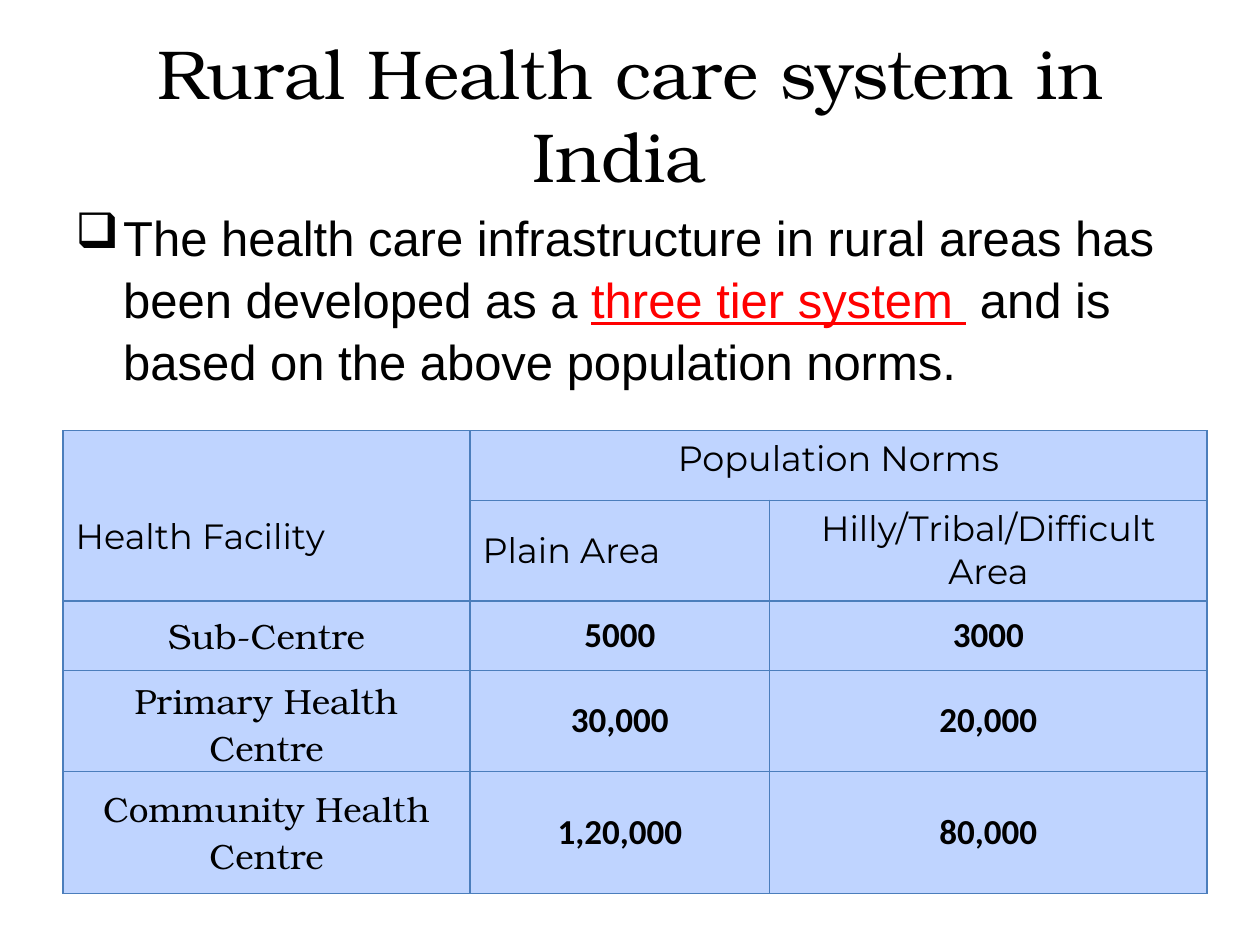
from lxml import etree
from pptx import Presentation
from pptx import util as u
from pptx.dml.color import RGBColor
from pptx.enum import text
from pptx.oxml.ns import qn

COLORS = {"ink": "000000", "accent": "FF0000", "cell": "BFD4FF", "border": "4B7EBC"}
SERIF, SANS, HEADING, FIGURE = "TeX Gyre Bonum", "Arial", "Montserrat", "Calibri"
WIDTH, HEIGHT = u.Inches(10), u.Inches(7.5)
MARGIN = 0.05  # share of the slide's width
COLUMNS = [3.23, 2.38, 3.47]
ROWS = [0.55, 0.8, 0.55, 0.8, 0.97]
CENTER, LEFT = text.PP_ALIGN.CENTER, text.PP_ALIGN.LEFT
MIDDLE, TOP = text.MSO_ANCHOR.MIDDLE, text.MSO_ANCHOR.TOP

FACILITIES = [
    ("Sub-Centre", "5000", "3000"),
    ("Primary Health Centre", "30,000", "20,000"),
    ("Community Health Centre", "1,20,000", "80,000"),
]


def color(name):
    return RGBColor.from_string(COLORS[name])


def style(paragraph, font, size, align=LEFT, bold=False):
    paragraph.alignment = align
    paragraph.font.name = font
    paragraph.font.size = u.Pt(size)
    paragraph.font.bold = bold
    paragraph.font.color.rgb = color("ink")


def add_text_box(slide, top, height, anchor):
    """Add a box between the side margins; top and height are shares of the slide."""
    box = slide.shapes.add_textbox(int(WIDTH * MARGIN), int(HEIGHT * top),
                                   int(WIDTH * (1 - 2 * MARGIN)), int(HEIGHT * height))
    frame = box.text_frame
    frame.word_wrap = True
    frame.vertical_anchor = anchor
    return frame.paragraphs[0]


def add_bullet(paragraph, symbol, indent):
    properties = paragraph._p.get_or_add_pPr()
    properties.set("marL", str(u.Inches(indent)))
    properties.set("indent", str(-u.Inches(indent)))
    etree.SubElement(properties, qn("a:buChar")).set("char", symbol)


def add_borders(cell):
    properties = cell._tc.get_or_add_tcPr()
    for position, side in enumerate(("lnL", "lnR", "lnT", "lnB")):
        line = etree.Element(qn(f"a:{side}"), w=str(u.Pt(0.75)))
        fill = etree.SubElement(line, qn("a:solidFill"))
        etree.SubElement(fill, qn("a:srgbClr"), val=COLORS["border"])
        properties.insert(position, line)


def fill_cell(cell, words, font, align=CENTER, bold=False, anchor=MIDDLE):
    cell.text = words
    cell.vertical_anchor = anchor
    style(cell.text_frame.paragraphs[0], font, 20, align, bold)


def add_norms_table(slide):
    frame = slide.shapes.add_table(len(ROWS), len(COLUMNS), int(WIDTH * MARGIN), u.Inches(3.42),
                                   u.Inches(sum(COLUMNS)), u.Inches(sum(ROWS)))
    norms = frame.table
    for column, width in zip(norms.columns, COLUMNS):
        column.width = u.Inches(width)
    for row, height in zip(norms.rows, ROWS):
        row.height = u.Inches(height)
    for cell in norms.iter_cells():
        cell.fill.solid()
        cell.fill.fore_color.rgb = color("cell")
        add_borders(cell)

    # Two-level heading
    facility_heading = norms.cell(0, 0)
    facility_heading.merge(norms.cell(1, 0))
    norms.cell(0, 1).merge(norms.cell(0, 2))
    fill_cell(facility_heading, "Health Facility", HEADING, LEFT)
    facility_heading.margin_top = u.Inches(0.39)
    fill_cell(norms.cell(0, 1), "Population Norms", HEADING, anchor=TOP)
    fill_cell(norms.cell(1, 1), "Plain Area", HEADING, LEFT)
    fill_cell(norms.cell(1, 2), "Hilly/Tribal/Difficult Area", HEADING)

    # One row per facility
    for row, (facility, *populations) in enumerate(FACILITIES, start=2):
        fill_cell(norms.cell(row, 0), facility, SERIF)
        for column, population in enumerate(populations, start=1):
            fill_cell(norms.cell(row, column), population, FIGURE, bold=True)


def main():
    deck = Presentation()
    deck.slide_width, deck.slide_height = WIDTH, HEIGHT
    slide = deck.slides.add_slide(deck.slide_layouts[6])

    # Title
    title = add_text_box(slide, 0.04, 0.16, MIDDLE)
    title.text = "Rural Health care system in India "
    style(title, SERIF, 39.6, CENTER)

    # Introduction with the key term marked
    intro = add_text_box(slide, 0.21, 0.22, TOP)
    add_bullet(intro, "❑", 0.38)
    style(intro, SANS, 28)
    intro.line_spacing = 1.05
    intro.add_run().text = "The health care infrastructure in rural areas has been developed as a "
    key_term = intro.add_run()
    key_term.text = "three tier system "
    key_term.font.color.rgb = color("accent")
    key_term.font.underline = True
    intro.add_run().text = " and is based on the above population norms."

    add_norms_table(slide)
    deck.save("out.pptx")


if __name__ == "__main__":
    main()
